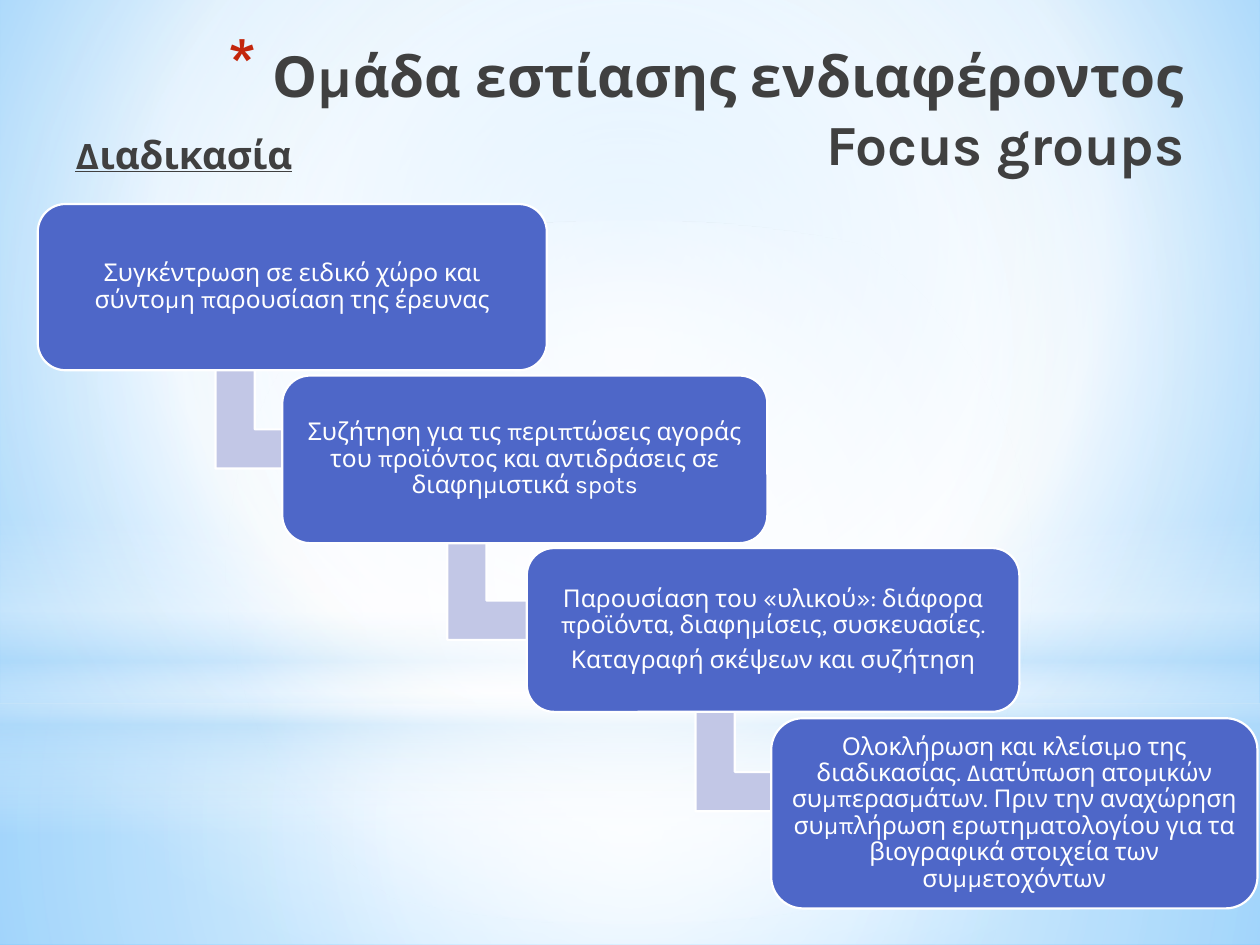
"""Build the focus group procedure slide: a staircase of four steps."""
import lxml.etree
import pptx
import pptx.dml.color
import pptx.enum.shapes
import pptx.enum.text
import pptx.oxml.ns
import pptx.util

Pt = pptx.util.Pt
qn = pptx.oxml.ns.qn
SHAPES = pptx.enum.shapes.MSO_SHAPE
ALIGN = pptx.enum.text.PP_ALIGN
ANCHOR = pptx.enum.text.MSO_ANCHOR

FONT = "Karla"
COLORS = {"text": "404040", "bullet": "C3260C", "step": "4E67C8",
          "arrow": "C2C7E6", "white": "FFFFFF", "sky": "B4DCFA",
          "edge": "5BB9FF", "core": "9ED5FF"}

TITLE = "Ομάδα εστίασης ενδιαφέροντος\vFocus groups"
SUBTITLE = "Διαδικασία"
STEPS = [
    (["Συγκέντρωση σε ειδικό χώρο και σύντομη παρουσίαση της έρευνας"],
     116.6, 290.9, 95),
    (["Συζήτηση για τις περιπτώσεις αγοράς του προϊόντος και αντιδράσεις σε "
      "διαφημιστικά spots"], 214.6, 277.2, 95.8),
    (["Παρουσίαση του «υλικού»: διάφορα προϊόντα, διαφημίσεις, συσκευασίες.",
      "Καταγραφή σκέψεων και συζήτηση"], 313.2, 281.5, 93.6),
    (["Ολοκλήρωση και κλείσιμο της διαδικασίας. Διατύπωση ατομικών "
      "συμπερασμάτων. Πριν την αναχώρηση συμπλήρωση ερωτηματολογίου για τα "
      "βιογραφικά στοιχεία των συμμετοχόντων"], 410.4, 277.9, 108.7),
]
STEP_LEFT, STEP_SHIFT = 21.6, 139.7
ARROW_LEFTS = [128.2, 260.6, 402.5]
ARROW_TOP, ARROW_DROP = 200.2, 97.9
ARROW_SIZE = (68.4, 78.5)

CENTER = (50, 50, 50, 50)
BACKDROP = ([(0, "core", 100), (60, "white", 100), (100, "edge", 100)],
            (20, 10, 20, 60))
GLOWS = [
    (SHAPES.RECTANGLE, (0, 401.8, 720, 138.2),
     [(0, "white", 91), (37, "white", 76), (100, "sky", 79)], CENTER),
    (SHAPES.RECTANGLE, (0, 0, 720, 401.8),
     [(0, "white", 89), (48, "white", 62), (100, "sky", 79)], CENTER),
    (SHAPES.RECTANGLE, (0, 296.6, 720, 180),
     [(0, "white", 0), (29, "white", 30), (45, "sky", 40), (55, "white", 26),
      (65, "sky", 60), (100, "white", 0)], None),
    (SHAPES.OVAL, (0, 126, 720, 401.8),
     [(0, "white", 100), (56, "white", 0)], CENTER),
]


def rgb(name):
    return pptx.dml.color.RGBColor.from_string(COLORS[name])


def child(parent, tag, **attributes):
    return lxml.etree.SubElement(parent, qn(tag), attributes)


def apply_gradient(properties, stops, focus):
    solid = properties.find(qn("a:solidFill"))
    gradient = lxml.etree.Element(qn("a:gradFill"), rotWithShape="1")
    stop_list = child(gradient, "a:gsLst")
    for position, color, opacity in stops:
        stop = child(stop_list, "a:gs", pos=str(position * 1000))
        tint = child(stop, "a:srgbClr", val=COLORS[color])
        if opacity < 100:
            child(tint, "a:alpha", val=str(opacity * 1000))
    if focus:
        sides = {side: str(value * 1000) for side, value in zip("ltrb", focus)}
        child(child(gradient, "a:path", path="circle"), "a:fillToRect", **sides)
    else:
        child(gradient, "a:lin", ang="5400000", scaled="0")
    properties.replace(solid, gradient)


def add_block(slide, kind, box, fill, outlined=True):
    block = slide.shapes.add_shape(kind, *map(Pt, box))
    block.shadow.inherit = False
    block.fill.solid()
    block.fill.fore_color.rgb = rgb(fill)
    if outlined:
        block.line.color.rgb = rgb("white")
        block.line.width = Pt(1.25)
    else:
        block.line.fill.background()
    return block


def style(paragraph, size, color, bold=False):
    paragraph.font.name = FONT
    paragraph.font.size = Pt(size)
    paragraph.font.bold = bold
    paragraph.font.color.rgb = rgb(color)


def add_heading(slide, text, box, size):
    frame = slide.shapes.add_textbox(*map(Pt, box)).text_frame
    frame.word_wrap = True
    frame.text = text
    heading = frame.paragraphs[0]
    style(heading, size, "text", bold=True)
    return heading


def add_step(slide, lines, box):
    step = add_block(slide, SHAPES.ROUNDED_RECTANGLE, box, "step")
    step.adjustments[0] = 0.167
    frame = step.text_frame
    frame.word_wrap = True
    frame.vertical_anchor = ANCHOR.MIDDLE
    frame.margin_left = frame.margin_right = Pt(4.3)
    frame.margin_top = frame.margin_bottom = Pt(4.3)
    frame.text = "\n".join(lines)
    for paragraph in frame.paragraphs:
        style(paragraph, 14, "white")
        paragraph.alignment = ALIGN.CENTER
        paragraph.line_spacing = 0.9
        paragraph.space_after = Pt(4.9)


def add_arrow(slide, left, top):
    arrow = add_block(slide, SHAPES.BENT_UP_ARROW, (left, top, *ARROW_SIZE), "arrow")
    arrow.rotation = 90
    for index, value in enumerate((0.328, 0.25, 0.358)):
        arrow.adjustments[index] = value


def main():
    deck = pptx.Presentation()
    deck.slide_width, deck.slide_height = Pt(720), Pt(540)
    slide = deck.slides.add_slide(deck.slide_layouts[6])

    slide.background.fill.solid()
    apply_gradient(next(slide.element.iter(qn("p:bgPr"))), *BACKDROP)
    for kind, box, stops, focus in GLOWS:
        glow = add_block(slide, kind, box, "white", outlined=False)
        apply_gradient(glow.element.spPr, stops, focus)

    title = add_heading(slide, TITLE, (36, 20, 648, 62.6), 32.4)
    title.alignment = ALIGN.RIGHT
    layout = title._p.get_or_add_pPr()
    layout.set("marL", str(Pt(25.2)))
    layout.set("indent", str(Pt(-25.2)))
    bullet_color = lxml.etree.Element(qn("a:buClr"))
    child(bullet_color, "a:srgbClr", val=COLORS["bullet"])
    bullet_size = lxml.etree.Element(qn("a:buSzPct"), val="128000")
    bullet = lxml.etree.Element(qn("a:buChar"), char="*")
    for position, part in enumerate((bullet_color, bullet_size, bullet)):
        layout.insert(position, part)

    subtitle = add_heading(slide, SUBTITLE, (36, 71.3, 648, 447.8), 22)
    subtitle.font.underline = True

    for index, (lines, top, width, height) in enumerate(STEPS):
        if index < len(ARROW_LEFTS):
            add_arrow(slide, ARROW_LEFTS[index], ARROW_TOP + index * ARROW_DROP)
        add_step(slide, lines, (STEP_LEFT + index * STEP_SHIFT, top, width, height))

    deck.save("out.pptx")


if __name__ == "__main__":
    main()
